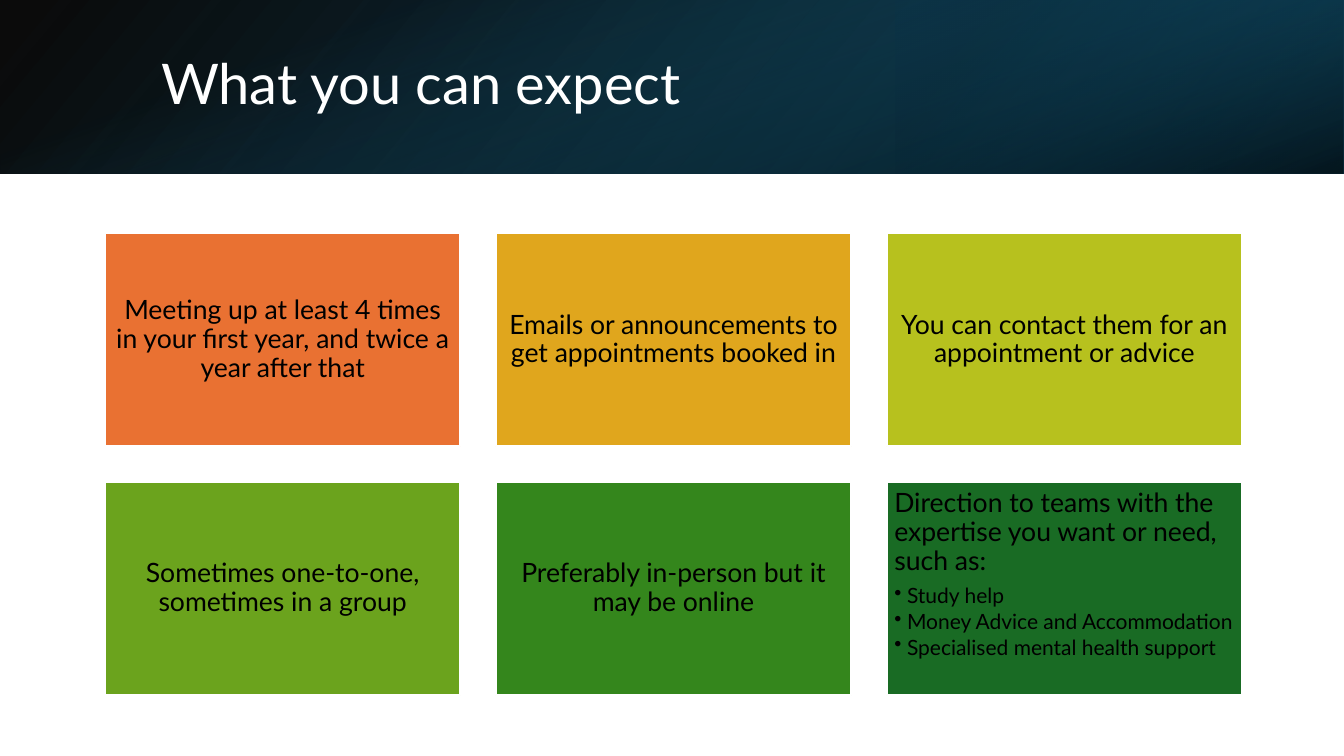
"""Build the 'What you can expect' slide: a gradient banner above six coloured cards."""
from dataclasses import dataclass

import lxml.etree
import pptx
import pptx.dml.color
import pptx.enum.shapes
import pptx.enum.text
import pptx.oxml
import pptx.oxml.ns
import pptx.util

Cm, Pt = pptx.util.Cm, pptx.util.Pt
RGB = pptx.dml.color.RGBColor.from_string
RECTANGLE = pptx.enum.shapes.MSO_SHAPE.RECTANGLE
MIDDLE = pptx.enum.text.MSO_ANCHOR.MIDDLE
TOP = pptx.enum.text.MSO_ANCHOR.TOP
CENTER = pptx.enum.text.PP_ALIGN.CENTER
LEFT = pptx.enum.text.PP_ALIGN.LEFT
qn = pptx.oxml.ns.qn


@dataclass(frozen=True)
class Theme:
    font: str = "Lato"
    white: str = "FFFFFF"
    black: str = "000000"
    navy: str = "0B3041"
    petrol: str = "104862"
    teal: str = "156082"
    cards: tuple = ("E97132", "E0A61D", "B7C11E", "6BA31D", "34861C", "196B24")
    title_size: int = 40
    card_size: int = 19
    bullet_size: int = 15


theme = Theme()


def style(paragraph, size, color, align, gap):
    paragraph.font.name = theme.font
    paragraph.font.size = Pt(size)
    paragraph.font.color.rgb = RGB(color)
    paragraph.alignment = align
    paragraph.line_spacing = 0.9
    paragraph.space_after = Pt(gap)


def fill_gradient(shape, stops, angle):
    """Replace the fill by a linear gradient of (position, colour, opacity) stops."""
    gradient = pptx.oxml.parse_xml(
        f'<a:gradFill {pptx.oxml.ns.nsdecls("a")} rotWithShape="1"><a:gsLst>'
        + "".join(
            f'<a:gs pos="{position * 1000}"><a:srgbClr val="{color}">'
            f'<a:alpha val="{opacity * 1000}"/></a:srgbClr></a:gs>'
            for position, color, opacity in stops
        )
        + f'</a:gsLst><a:lin ang="{angle * 60000}" scaled="0"/></a:gradFill>'
    )
    shape.fill.background()
    no_fill = shape.element.spPr.find(qn("a:noFill"))
    shape.element.spPr.replace(no_fill, gradient)


presentation = pptx.Presentation()
presentation.slide_width, presentation.slide_height = Cm(33.87), Cm(19.05)
slide = presentation.slides.add_slide(presentation.slide_layouts[6])

banner_layers = [
    ((0, 0, 33.87, 4.37), 0, True, 140,
     [(0, theme.black, 96), (100, theme.petrol, 100)]),
    ((22.58, 0, 11.29, 4.37), 180, True, 320,
     [(19, theme.navy, 68), (100, theme.teal, 79)]),
    ((14.75, -14.75, 4.37, 33.87), 90, False, 340,
     [(23, theme.teal, 0), (99, theme.black, 74)]),
]
for box, rotation, mirrored, angle, stops in banner_layers:
    layer = slide.shapes.add_shape(RECTANGLE, *map(Cm, box))
    layer.shadow.inherit = False
    layer.line.fill.background()
    layer.rotation = rotation
    if mirrored:
        layer.element.spPr.find(qn("a:xfrm")).set("flipH", "1")
    fill_gradient(layer, stops, angle)

title = slide.shapes.add_textbox(Cm(3.81), Cm(0.95), Cm(27.89), Cm(2.44)).text_frame
title.word_wrap = True
title.vertical_anchor = MIDDLE
title.text = "What you can expect"
style(title.paragraphs[0], theme.title_size, theme.white, LEFT, 0)

expectations = [
    ("Meeting up at least 4 times in your first year, and twice a year after that", []),
    ("Emails or announcements to get appointments booked in", []),
    ("You can contact them for an appointment or advice", []),
    ("Sometimes one-to-one, sometimes in a group", []),
    ("Preferably in-person but it may be online", []),
    ("Direction to teams with the expertise you want or need, such as:",
     ["Study help", "Money Advice and Accommodation", "Specialised mental health support"]),
]
card_left, card_top, card_width, card_height, gap = 2.65, 5.88, 8.95, 5.37, 0.9
inset, bullet_indent = Cm(0.19), Cm(0.32)

for index, (expectation, teams) in enumerate(expectations):
    row, column = divmod(index, 3)
    card = slide.shapes.add_shape(
        RECTANGLE,
        Cm(card_left + column * (card_width + gap)),
        Cm(card_top + row * (card_height + gap)),
        Cm(card_width),
        Cm(card_height),
    )
    card.shadow.inherit = False
    card.fill.solid()
    card.fill.fore_color.rgb = RGB(theme.cards[index])
    card.line.color.rgb = RGB(theme.white)
    card.line.width = Pt(1.5)

    message = card.text_frame
    message.word_wrap = True
    message.margin_left = message.margin_right = inset
    message.margin_top = message.margin_bottom = inset
    message.vertical_anchor = TOP if teams else MIDDLE
    message.text = expectation
    style(message.paragraphs[0], theme.card_size, theme.black, LEFT if teams else CENTER, 6.65)

    for team in teams:
        bullet = message.add_paragraph()
        bullet.text = team
        bullet.level = 1
        style(bullet, theme.bullet_size, theme.black, LEFT, 2.25)
        properties = bullet._p.get_or_add_pPr()
        properties.set("marL", str(bullet_indent))
        properties.set("indent", str(-bullet_indent))
        mark = lxml.etree.Element(qn("a:buChar"), char="•")
        properties.find(qn("a:defRPr")).addprevious(mark)

presentation.save("out.pptx")
